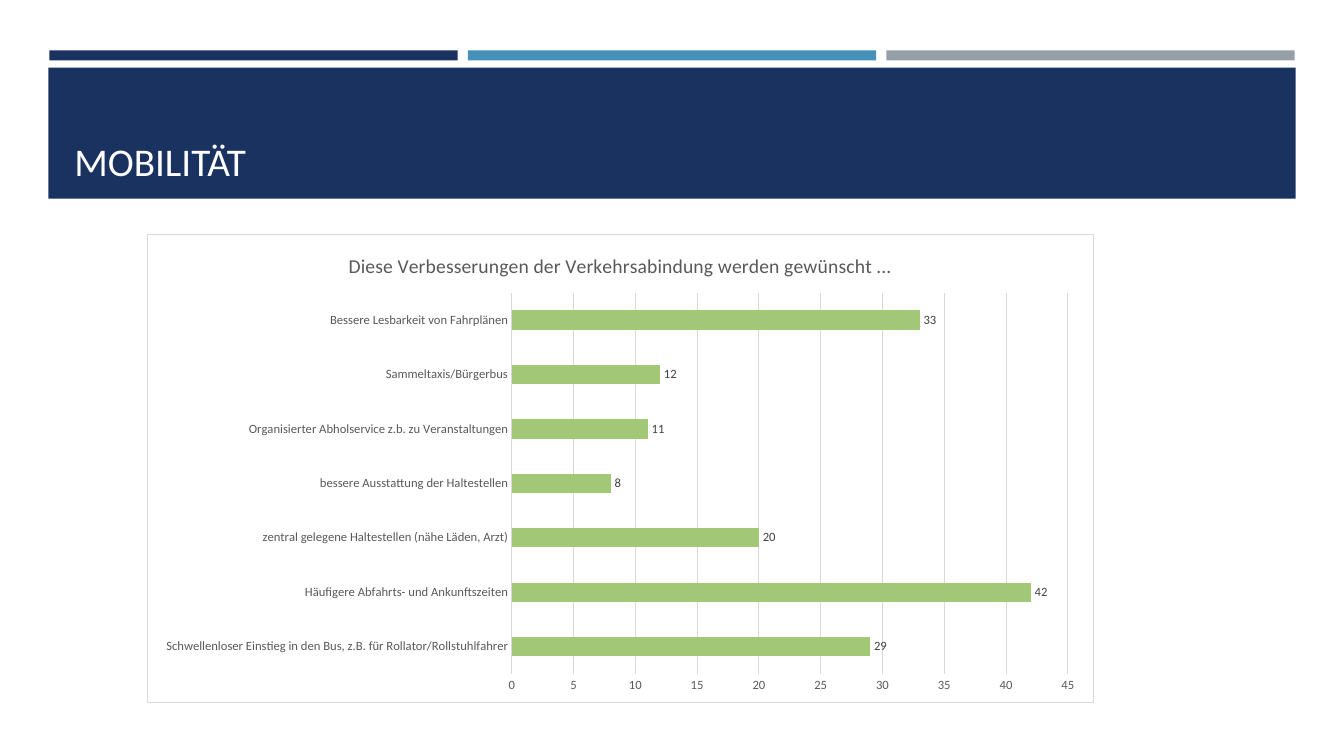
import pptx
import pptx.chart.data
import pptx.dml.color
import pptx.enum.chart
import pptx.enum.shapes
import pptx.enum.text
import pptx.oxml
import pptx.util

COLORS = {"navy": "1A3260", "blue": "4590B8", "gray": "969FA7", "white": "FFFFFF",
          "green": "A2C777", "rule": "D9D9D9", "text": "595959", "value": "404040"}
NS = 'xmlns:c="http://schemas.openxmlformats.org/drawingml/2006/chart" ' \
     'xmlns:a="http://schemas.openxmlformats.org/drawingml/2006/main"'
inch, pt = pptx.util.Inches, pptx.util.Pt


def rgb(name):
    return pptx.dml.color.RGBColor.from_string(COLORS[name])


def style_font(font, size, color):
    for key, value in {"size": pt(size), "name": "Calibri", "bold": False}.items():
        setattr(font, key, value)
    font.color.rgb = rgb(color)


prs = pptx.Presentation()
prs.slide_width, prs.slide_height = inch(13.33), inch(7.5)
s = prs.slides.add_slide(prs.slide_layouts[6])

# Three-column accent strip above the title band
left, column, pitch = 0.49, 4.05, 4.15
blocks = [(left + i * pitch, 0.5, column, 0.1, color)
          for i, color in enumerate(["navy", "blue", "gray"])]
blocks.append((0.48, 0.67, 12.37, 1.3, "navy"))
for x, y, w, h, color in blocks:
    sp = s.shapes.add_shape(pptx.enum.shapes.MSO_SHAPE.RECTANGLE,
                            inch(x), inch(y), inch(w), inch(h))
    sp.shadow.inherit = False
    sp.fill.solid()
    sp.fill.fore_color.rgb = rgb(color)
    sp.line.fill.background()

# Title
tf = s.shapes.add_textbox(inch(0.64), inch(0.77), inch(12.06), inch(1.11)).text_frame
tf.word_wrap = True
tf.vertical_anchor = pptx.enum.text.MSO_ANCHOR.BOTTOM
r = tf.paragraphs[0].add_run()
r.text = "MOBILITÄT"
style_font(r.font, 28, "white")

# Bar chart, categories listed from bottom to top
wishes = {
    "Schwellenloser Einstieg in den Bus, z.B. für Rollator/Rollstuhlfahrer": 29,
    "Häufigere Abfahrts- und Ankunftszeiten": 42,
    "zentral gelegene Haltestellen (nähe Läden, Arzt)": 20,
    "bessere Ausstattung der Haltestellen": 8,
    "Organisierter Abholservice z.b. zu Veranstaltungen": 11,
    "Sammeltaxis/Bürgerbus": 12,
    "Bessere Lesbarkeit von Fahrplänen": 33,
}
data = pptx.chart.data.CategoryChartData()
data.categories = list(wishes)
data.add_series("Series 1", list(wishes.values()))
chart = s.shapes.add_chart(pptx.enum.chart.XL_CHART_TYPE.BAR_CLUSTERED,
                           inch(1.46), inch(2.32), inch(9.39), inch(4.65), data).chart
style_font(chart.font, 10, "text")
chart.has_legend = False
chart.has_title = True
p = chart.chart_title.text_frame.paragraphs[0]
r = p.add_run()
r.text = "Diese Verbesserungen der Verkehrsabindung werden gewünscht ..."
style_font(r.font, 14, "text")

# Axes
for axis in (chart.category_axis, chart.value_axis):
    axis.major_tick_mark = axis.minor_tick_mark = pptx.enum.chart.XL_TICK_MARK.NONE
    style_font(axis.tick_labels.font, 9, "text")
chart.category_axis.has_major_gridlines = False
for key, value in {"minimum_scale": 0, "maximum_scale": 45, "major_unit": 5,
                   "has_major_gridlines": True}.items():
    setattr(chart.value_axis, key, value)
chart.value_axis.format.line.fill.background()
for line in (chart.category_axis.format.line, chart.value_axis.major_gridlines.format.line):
    line.color.rgb = rgb("rule")
    line.width = pt(0.75)

# Bars and value labels
plot = chart.plots[0]
plot.gap_width = 182
plot.vary_by_categories = False
bars = plot.series[0]
bars.format.fill.solid()
bars.format.fill.fore_color.rgb = rgb("green")
labels = bars.data_labels
labels.show_value = True
labels.position = pptx.enum.chart.XL_LABEL_POSITION.OUTSIDE_END
style_font(labels.font, 9, "value")

# Plot position as shares of the chart
area = chart.element.chart.plotArea
for old in area.xpath("c:layout"):
    area.remove(old)
shares = "".join(f'<c:{key} val="{value}"/>' for key, value in
                 {"x": 0.385, "y": 0.125, "w": 0.588, "h": 0.815}.items())
area.insert(0, pptx.oxml.parse_xml(
    f'<c:layout {NS}><c:manualLayout><c:layoutTarget val="inner"/>'
    f'<c:xMode val="edge"/><c:yMode val="edge"/>{shares}</c:manualLayout></c:layout>'))

# Chart background and border
fill = '<a:solidFill><a:srgbClr val="{}"/></a:solidFill>'
chart.element.chart.addnext(pptx.oxml.parse_xml(
    f'<c:spPr {NS}>{fill.format(COLORS["white"])}'
    f'<a:ln w="{pt(0.75)}">{fill.format(COLORS["rule"])}</a:ln></c:spPr>'))

prs.save("out.pptx")
